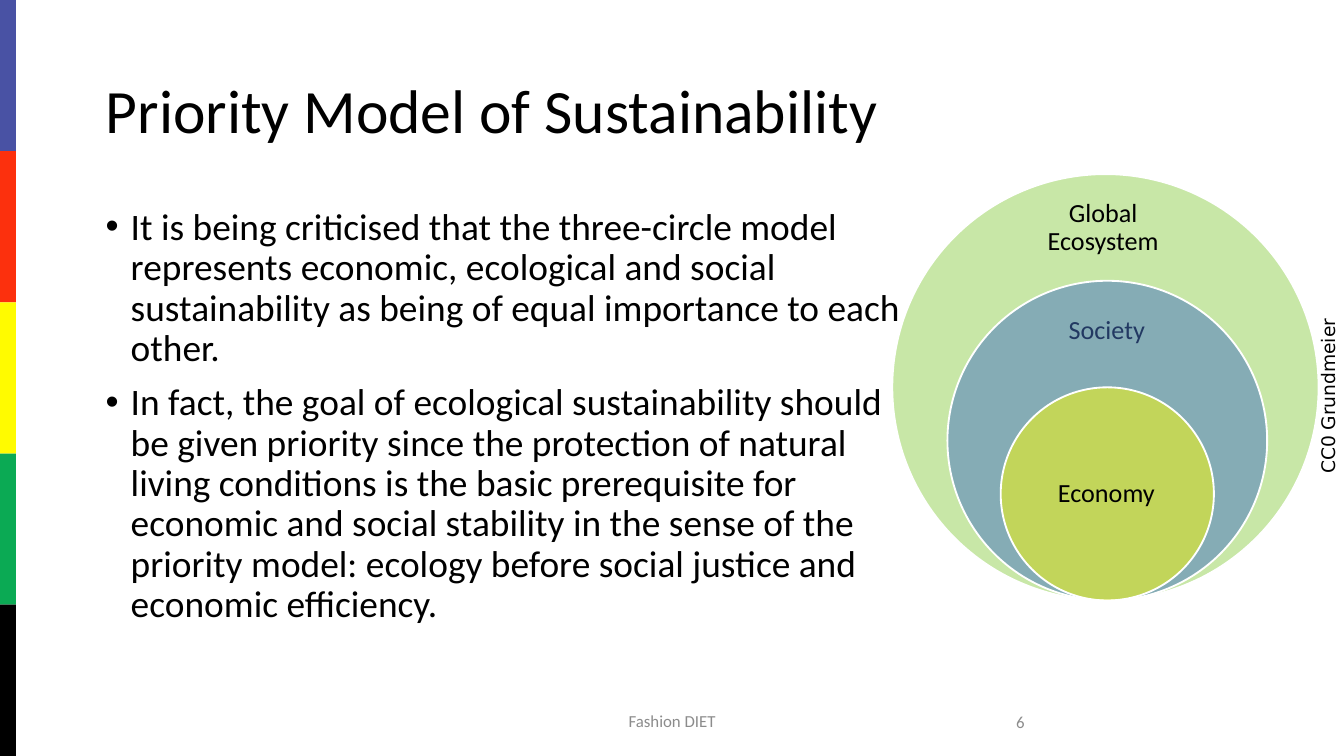
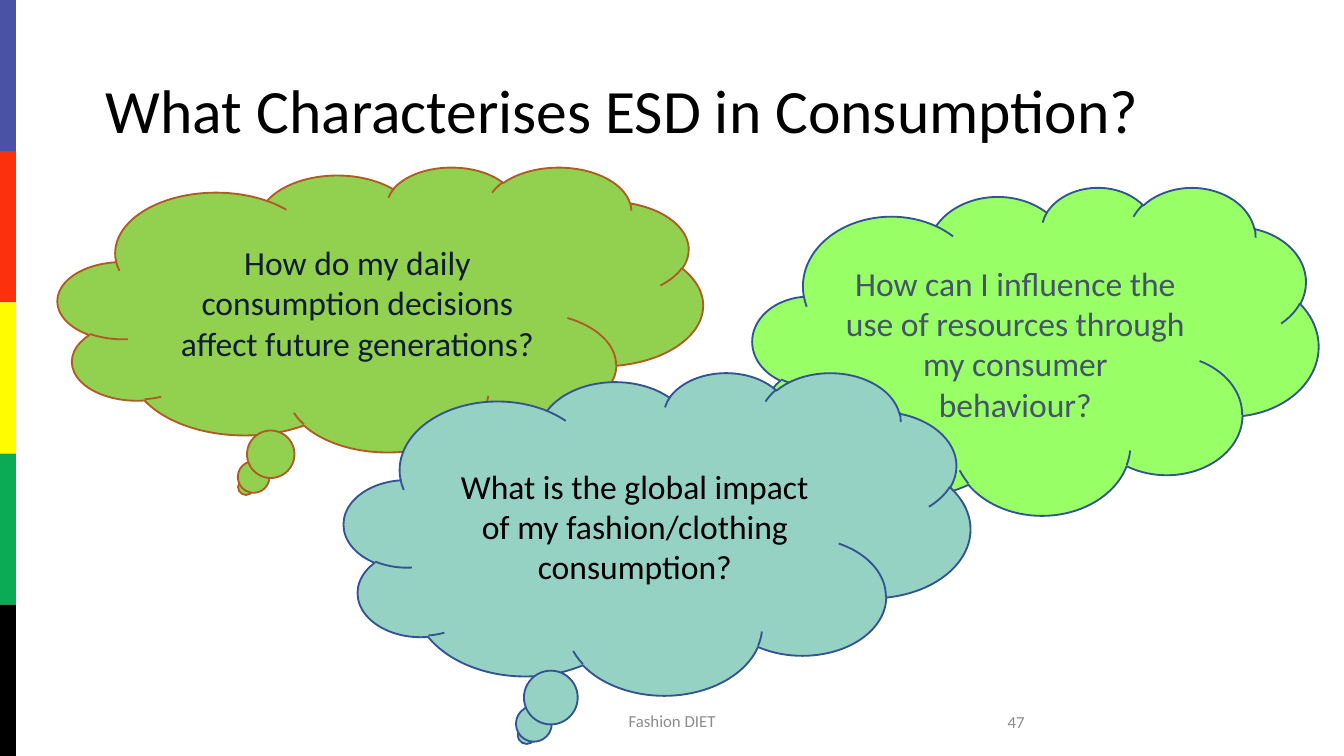
from dataclasses import dataclass

from lxml.etree import SubElement
from pptx import Presentation
from pptx.dml.color import RGBColor
from pptx.enum.shapes import MSO_SHAPE as Preset
from pptx.enum.text import MSO_ANCHOR as Anchor, MSO_AUTO_SIZE as AutoSize, PP_ALIGN as Align
from pptx.oxml.ns import qn
from pptx.util import Pt

BLACK = RGBColor(0x00, 0x00, 0x00)
WHITE = RGBColor(0xFF, 0xFF, 0xFF)
FOOTER_GRAY = RGBColor(0x8C, 0x8C, 0x8C)
INDIGO = RGBColor(0x49, 0x52, 0xA4)
RED = RGBColor(0xFC, 0x30, 0x0D)
YELLOW = RGBColor(0xFF, 0xFB, 0x00)
GREEN = RGBColor(0x0B, 0xAA, 0x54)
LEAF = RGBColor(0x92, 0xD0, 0x50)
BLUE = RGBColor(0x44, 0x72, 0xC4)
BRIGHT_YELLOW = RGBColor(0xFF, 0xFF, 0x00)
LIME = RGBColor(0x99, 0xFF, 0x66)
TEAL = RGBColor(0x96, 0xD2, 0xC4)
BROWN = RGBColor(0xAF, 0x5C, 0x24)
NAVY = RGBColor(0x32, 0x54, 0x91)
MIDNIGHT = RGBColor(0x10, 0x1C, 0x32)
SLATE = RGBColor(0x44, 0x54, 0x6A)

STRIPES = (INDIGO, RED, YELLOW, GREEN, BLACK)
WIDTH, HEIGHT = 720, 405
STRIPE_WIDTH = 8.6
CIRCLES_BOTTOM = 321.7
TITLE_ONLY = 5


@dataclass(frozen=True)
class Box:
    """A frame in points."""

    left: float
    top: float
    width: float
    height: float

    def lengths(self) -> tuple:
        """Return the frame as lengths for the shape methods."""
        return Pt(self.left), Pt(self.top), Pt(self.width), Pt(self.height)


@dataclass(frozen=True)
class Circle:
    """One ring of the priority model and its label."""

    label: str
    center: float
    diameter: float
    fill: RGBColor
    label_box: Box
    label_behind: bool = False


@dataclass(frozen=True)
class Cloud:
    """A thought cloud with a question."""

    question: str
    box: Box
    fill: RGBColor
    line: RGBColor
    color: RGBColor


TITLE_BOX = Box(49.5, 21.5, 621, 78.5)
BODY_BOX = Box(49.5, 108, 452, 257)
FOOTER_BOX = Box(238.5, 375.4, 243, 21.6)
NUMBER_BOX = Box(394, 375.7, 162, 21.6)
CREDIT_BOX = Box(650.2, 190, 122.4, 19.4)

CRITICISM = (
    "It is being criticised that the three-circle model represents economic, ecological "
    "and social sustainability as being of equal importance to each other.",
    "In fact, the goal of ecological sustainability should be given priority since the "
    "protection of natural living conditions is the basic prerequisite for economic and "
    "social stability in the sense of the priority model: ecology before social justice "
    "and economic efficiency.",
)
CIRCLES = (
    Circle("Global Ecosystem", 592.2, 228.4, LEAF, Box(551, 105, 80, 34.6)),
    Circle("Society", 593.2, 171.3, BLUE, Box(553, 161.3, 80, 31.7), label_behind=True),
    Circle("Economy", 593.2, 114.2, BRIGHT_YELLOW, Box(552.5, 236, 80.5, 57)),
)
CLOUDS = (
    Cloud("How do my daily consumption decisions affect future generations?",
          Box(31, 89.3, 345.6, 152.6), LEAF, BROWN, MIDNIGHT),
    Cloud("How can I influence the use of resources through my consumer behaviour?",
          Box(403.2, 100.1, 303.1, 175.7), LIME, NAVY, SLATE),
    Cloud("What is the global impact of my fashion/clothing consumption?",
          Box(184.3, 199.4, 335.5, 172.8), TEAL, NAVY, BLACK),
)


def write(shape, *texts: str, size: float, color: RGBColor = BLACK, font: str = "Calibri",
          align=Align.LEFT, anchor=Anchor.MIDDLE, spacing: float = 1.0, gap: float = 0,
          inset: float | None = None, bullets: bool = False, wrap: bool = True) -> None:
    """Fill a shape with formatted paragraphs."""
    frame = shape.text_frame
    frame.auto_size = AutoSize.NONE
    frame.word_wrap = wrap
    frame.vertical_anchor = anchor
    if inset is not None:
        frame.margin_left = frame.margin_right = Pt(inset)
        frame.margin_top = frame.margin_bottom = Pt(inset)
    for index, text in enumerate(texts):
        paragraph = frame.add_paragraph() if index else frame.paragraphs[0]
        paragraph.alignment = align
        paragraph.line_spacing = spacing
        paragraph.space_before = Pt(gap if index else 0)
        if bullets:
            properties = paragraph._p.get_or_add_pPr()
            properties.set("marL", str(Pt(13.5)))
            properties.set("indent", str(-Pt(13.5)))
            SubElement(properties, qn("a:buFont"), typeface="Arial")
            SubElement(properties, qn("a:buChar"), char="•")
        run = paragraph.add_run()
        run.text = text
        run.font.size = Pt(size)
        run.font.name = font
        run.font.color.rgb = color


def add_text(slide, box: Box, *texts: str, rotation: float = 0, **text_format) -> None:
    """Add a text box."""
    shape = slide.shapes.add_textbox(*box.lengths())
    shape.rotation = rotation
    write(shape, *texts, **text_format)


def add_figure(slide, preset: Preset, box: Box, fill: RGBColor,
               line: RGBColor | None = None, opacity: int = 100):
    """Add a filled preset shape."""
    shape = slide.shapes.add_shape(preset, *box.lengths())
    shape.shadow.inherit = False
    shape.fill.solid()
    shape.fill.fore_color.rgb = fill
    if opacity < 100:
        color = shape._element.spPr.find(qn("a:solidFill")).find(qn("a:srgbClr"))
        SubElement(color, qn("a:alpha"), val=str(opacity * 1000))
    if line is None:
        shape.line.fill.background()
    else:
        shape.line.color.rgb = line
        shape.line.width = Pt(1)
    return shape


def add_base_slide(presentation, title: str, number: int):
    """Add a slide with stripes, title and footer."""
    slide = presentation.slides.add_slide(presentation.slide_layouts[TITLE_ONLY])
    stripe_height = HEIGHT / len(STRIPES)
    for index, color in enumerate(STRIPES):
        box = Box(0, index * stripe_height, STRIPE_WIDTH, stripe_height)
        add_figure(slide, Preset.RECTANGLE, box, color)
    heading = slide.shapes.title
    heading.left, heading.top, heading.width, heading.height = TITLE_BOX.lengths()
    write(heading, title, size=33, spacing=0.9)
    add_text(slide, FOOTER_BOX, "Fashion DIET", size=9, color=FOOTER_GRAY, align=Align.CENTER)
    add_text(slide, NUMBER_BOX, str(number), size=9, color=FOOTER_GRAY, align=Align.RIGHT)
    return slide


def add_circle_label(slide, circle: Circle) -> None:
    """Add the label of a ring."""
    add_text(slide, circle.label_box, circle.label, size=14, align=Align.CENTER,
             spacing=0.9, inset=7.9)


def add_circle(slide, circle: Circle) -> None:
    """Add a ring standing on the common base with its label."""
    if circle.label_behind:
        add_circle_label(slide, circle)
    box = Box(circle.center - circle.diameter / 2, CIRCLES_BOTTOM - circle.diameter,
              circle.diameter, circle.diameter)
    add_figure(slide, Preset.OVAL, box, circle.fill, WHITE, opacity=50)
    if not circle.label_behind:
        add_circle_label(slide, circle)


def add_cloud(slide, cloud: Cloud) -> None:
    """Add a thought cloud."""
    shape = add_figure(slide, Preset.CLOUD_CALLOUT, cloud.box, cloud.fill, cloud.line)
    write(shape, cloud.question, size=18, color=cloud.color, align=Align.CENTER)


def build_priority_model(presentation) -> None:
    """Build the slide on the priority model."""
    slide = add_base_slide(presentation, "Priority Model of Sustainability", 6)
    outer, *inner = CIRCLES
    add_circle(slide, outer)
    add_text(slide, BODY_BOX, *CRITICISM, size=20, anchor=Anchor.TOP, spacing=0.9,
             gap=7.5, bullets=True)
    for circle in inner:
        add_circle(slide, circle)
    add_text(slide, CREDIT_BOX, "CC0 Grundmeier", rotation=270, size=10,
             font="DejaVu Sans", anchor=Anchor.TOP)


def build_consumption(presentation) -> None:
    """Build the slide with questions about consumption."""
    slide = add_base_slide(presentation, "What Characterises ESD in Consumption?", 47)
    for cloud in CLOUDS:
        add_cloud(slide, cloud)


def main() -> None:
    """Build and save the presentation."""
    presentation = Presentation()
    presentation.slide_width, presentation.slide_height = Pt(WIDTH), Pt(HEIGHT)
    build_priority_model(presentation)
    build_consumption(presentation)
    presentation.save("out.pptx")


if __name__ == "__main__":
    main()
